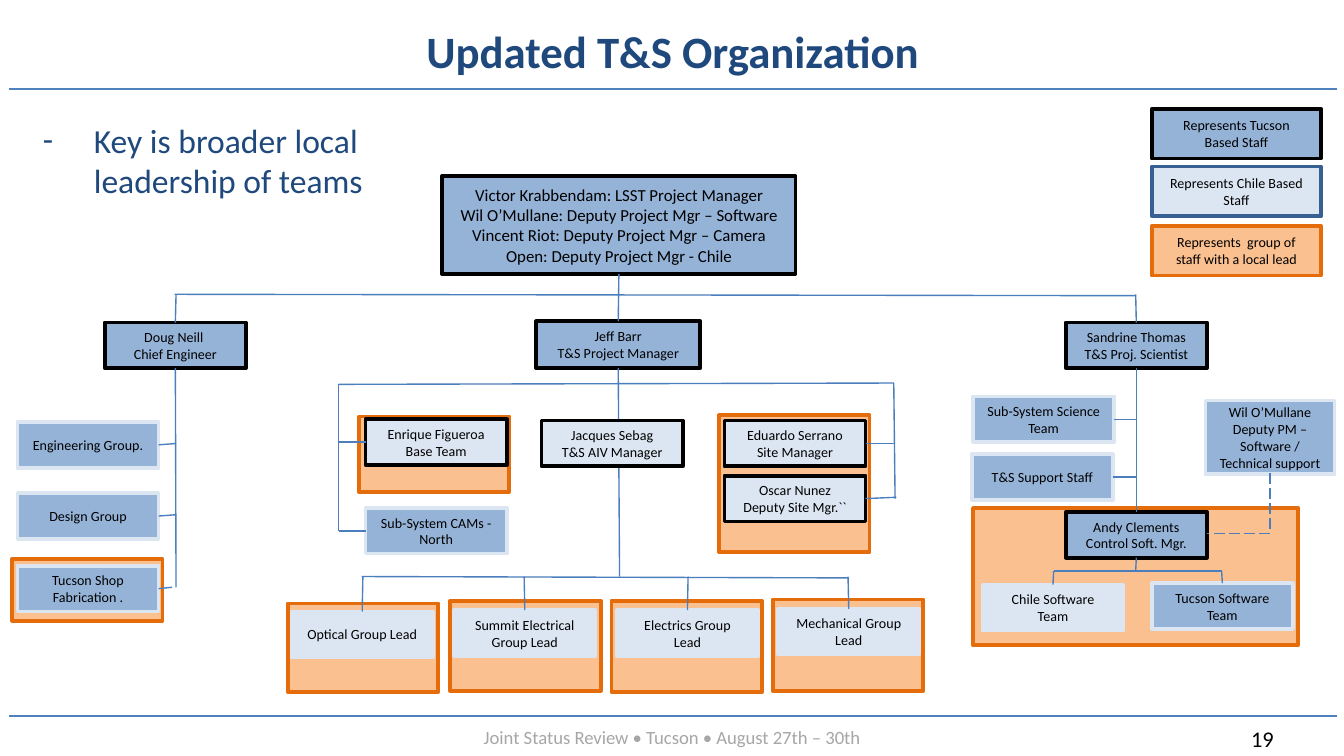
from pptx import Presentation
from pptx.util import Pt
from pptx.dml.color import RGBColor
from pptx.enum.dml import MSO_LINE
from pptx.enum.shapes import MSO_CONNECTOR as CONN, MSO_SHAPE as SHAPE
from pptx.enum.text import MSO_ANCHOR as ANCHOR, PP_ALIGN as ALIGN
from pptx.oxml import parse_xml
from pptx.oxml.ns import nsdecls, qn

PX = 9144
BLACK = RGBColor(0x00, 0x00, 0x00)
BLUE = RGBColor(0x95, 0xB3, 0xD7)
PALE = RGBColor(0xDC, 0xE6, 0xF2)
PEACH = RGBColor(0xFA, 0xC0, 0x90)
ORANGE = RGBColor(0xE4, 0x6C, 0x0A)
STEEL = RGBColor(0x37, 0x60, 0x92)
WIRE = RGBColor(0x4B, 0x7E, 0xBC)
RULE = RGBColor(0x4F, 0x81, 0xBD)
NAVY = RGBColor(0x1F, 0x49, 0x7D)
GREY = RGBColor(0xA6, 0xA6, 0xA6)
TOP, LEFT, BOTTOM, RIGHT = range(4)

deck = Presentation()
deck.slide_width = 1000 * PX
deck.slide_height = deck.slide_width * 9 // 16
slide = deck.slides.add_slide(deck.slide_layouts[6])
shapes = slide.shapes


def add_box(x, y, w, h, fill, edge, text="", size=7.5):
    box = shapes.add_shape(SHAPE.RECTANGLE, x * PX, y * PX, w * PX, h * PX)
    box.shadow.inherit = False
    box.fill.solid()
    box.fill.fore_color.rgb = fill
    box.line.color.rgb = edge
    box.line.width = Pt(2)
    frame = box.text_frame
    frame.word_wrap = True
    frame.vertical_anchor = ANCHOR.MIDDLE
    frame.margin_left = frame.margin_right = 10 * PX
    frame.margin_top = frame.margin_bottom = 4 * PX
    frame.text = text
    for para in frame.paragraphs:
        para.alignment = ALIGN.CENTER
        for run in para.runs:
            run.font.name = "Calibri"
            run.font.size = Pt(size)
            run.font.color.rgb = BLACK
    return box


def add_line(x1, y1, x2, y2, color=WIRE, width=0.75, kind=CONN.STRAIGHT):
    line = shapes.add_connector(kind, x1 * PX, y1 * PX, x2 * PX, y2 * PX)
    line.line.color.rgb = color
    line.line.width = Pt(width)
    line._element.spPr.append(parse_xml(f"<a:effectLst {nsdecls('a')}/>"))
    return line


for y in (66, 533):
    add_line(995, y, 7, y, RULE, 1)

for x, y, w, h in [
    (9, 416, 112, 46), (267, 310, 112, 56), (724, 378, 242, 102), (535, 309, 112, 102),
    (214, 449, 112, 66), (335, 447, 112, 67), (455, 447, 112, 68), (575, 446, 112, 68),
]:
    add_box(x, y, w, h, PEACH, ORANGE)

boss = add_box(329, 131, 263, 73, BLUE, BLACK,
               "Victor Krabbendam: LSST Project Manager\n"
               "Wil O’Mullane: Deputy Project Mgr – Software\n"
               "Vincent Riot: Deputy Project Mgr – Camera\n"
               "Open: Deputy Project Mgr - Chile", 9)
doug = add_box(78, 240, 105, 34, BLUE, BLACK, "Doug Neill \nChief Engineer")
jeff = add_box(399, 239, 122, 35, BLUE, BLACK, "Jeff Barr\nT&S Project Manager")
sandy = add_box(793, 240, 105, 34, BLUE, BLACK, "Sandrine Thomas\nT&S Proj. Scientist")
andy = add_box(793, 381, 105, 34, BLUE, BLACK, "Andy Clements\nControl Soft. Mgr.")

add_line(131, 274, 131, 437).begin_connect(doug, BOTTOM)
add_line(461, 274, 461, 429).begin_connect(jeff, BOTTOM)
spine = add_line(845, 274, 845, 381)
spine.begin_connect(sandy, BOTTOM)
spine.end_connect(andy, TOP)
stem = add_line(460, 204, 461, 239)
stem.begin_connect(boss, BOTTOM)
stem.end_connect(jeff, TOP)

for x1, y1, x2, y2 in [
    (130, 219, 845, 220), (252, 286, 665, 285), (252, 286, 252, 395),
    (665, 285, 666, 371), (269, 429, 631, 430), (784, 425, 909, 425),
]:
    add_line(x1, y1, x2, y2)

for mid, head in ((131, doug), (845, sandy)):
    add_line(mid, 219, mid, 239).end_connect(head, TOP)
add_line(845, 414, 845, 425).begin_connect(andy, BOTTOM)

add_box(403, 313, 105, 34, PALE, BLACK, "Jacques Sebag\nT&S AIV Manager")
for x, y, fill, edge, text, side, end_x, end_y in [
    (579, 453, PALE, PALE, "Mechanical Group Lead", TOP, 631, 429),
    (338, 454, PALE, PALE, "Summit Electrical Group Lead", TOP, 390, 429),
    (217, 455, PALE, PALE, "Optical Group Lead", TOP, 270, 429),
    (459, 454, PALE, PALE, "Electrics Group Lead", TOP, 512, 429),
    (539, 313, PALE, BLACK, "Eduardo Serrano\nSite Manager", RIGHT, 665, 330),
    (539, 354, PALE, BLACK, "Oscar Nunez\nDeputy Site Mgr.``", RIGHT, 667, 370),
    (272, 312, PALE, BLACK, "Enrique Figueroa\nBase Team", LEFT, 252, 329),
    (272, 378, BLUE, PALE, "Sub-System CAMs - North", LEFT, 252, 395),
    (13, 314, BLUE, PALE, "Engineering Group.", RIGHT, 131, 330),
    (13, 367, BLUE, PALE, "Design Group", RIGHT, 131, 383),
    (13, 421, BLUE, PALE, "Tucson Shop Fabrication .", RIGHT, 128, 437),
    (724, 295, BLUE, PALE, "Sub-System Science Team", RIGHT, 846, 312),
    (723, 338, BLUE, PALE, "T&S Support Staff", RIGHT, 846, 355),
    (731, 435, PALE, PALE, "Chile Software Team", TOP, 784, 425),
    (857, 434, BLUE, PALE, "Tucson Software Team", TOP, 909, 425),
]:
    box = add_box(x, y, 105, 34, fill, edge, text)
    add_line(x, y, end_x, end_y).begin_connect(box, side)

add_box(897, 298, 96, 55, BLUE, PALE, "Wil O’Mullane Deputy PM – Software / Technical support ")
elbow = add_line(899, 351, 944, 398, kind=CONN.ELBOW)
elbow.line.dash_style = MSO_LINE.LONG_DASH
form = elbow._element.spPr
form.find(qn("a:prstGeom")).set("prst", "bentConnector2")
form.find(qn("a:xfrm")).set("rot", "5400000")

for y, fill, edge, text in [
    (81, BLUE, BLACK, "Represents Tucson Based Staff"),
    (124, PALE, STEEL, "Represents Chile Based Staff"),
    (168, PEACH, ORANGE, "Represents  group of staff with a local lead"),
]:
    add_box(857, y, 126, 37, fill, edge, text)

for x, y, w, h, text, size, color, align, anchor in [
    (192, 15, 617, 46, "Updated T&S Organization", 24, NAVY, ALIGN.CENTER, ANCHOR.MIDDLE),
    (22, 84, 261, 77, "Key is broader local leadership of teams", 18, NAVY, ALIGN.LEFT, ANCHOR.TOP),
    (50, 535, 900, 27, "Joint Status Review • Tucson • August 27th – 30th", 10, GREY, ALIGN.CENTER, ANCHOR.TOP),
    (921, 535, 62, 30, "19", 12, BLACK, ALIGN.LEFT, ANCHOR.TOP),
]:
    note = shapes.add_textbox(x * PX, y * PX, w * PX, h * PX)
    frame = note.text_frame
    frame.word_wrap = True
    frame.vertical_anchor = anchor
    frame.text = text
    para = frame.paragraphs[0]
    para.alignment = align
    if size == 18:
        props = para._p.get_or_add_pPr()
        props.set("marL", str(38 * PX))
        props.set("indent", str(-38 * PX))
        props.append(parse_xml(f'<a:buFont {nsdecls("a")} typeface="Calibri"/>'))
        props.append(parse_xml(f'<a:buChar {nsdecls("a")} char="-"/>'))
    font = para.runs[0].font
    font.name = "Calibri"
    font.size = Pt(size)
    font.bold = size == 24
    font.color.rgb = color

deck.save("out.pptx")
